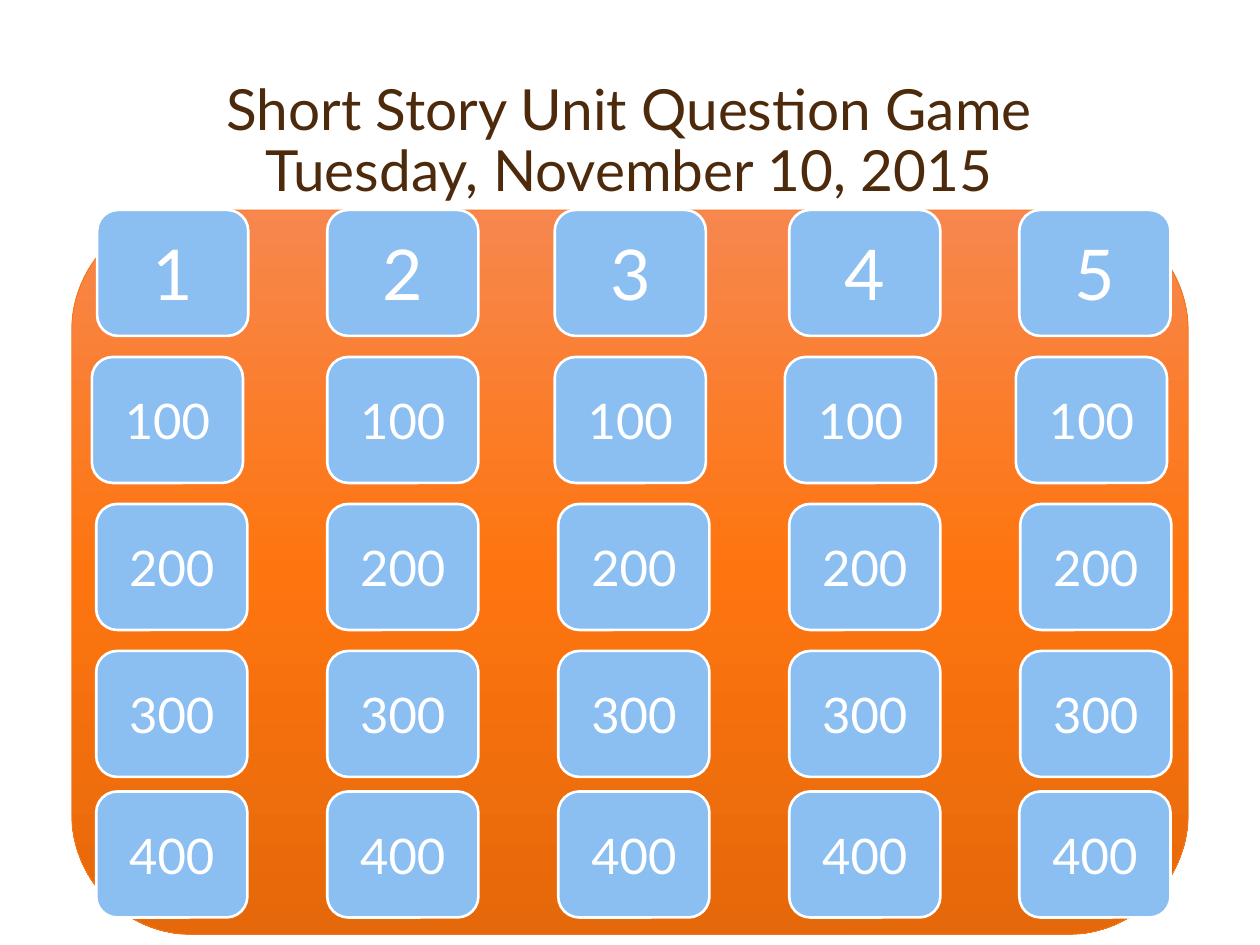
from copy import deepcopy
from dataclasses import dataclass

from pptx import Presentation
from pptx.dml.color import RGBColor
from pptx.enum.shapes import MSO_SHAPE
from pptx.enum.text import MSO_ANCHOR, MSO_AUTO_SIZE, PP_ALIGN
from pptx.util import Pt


@dataclass(frozen=True)
class Theme:
    font: str = "Lato"
    brown: str = "4D2A0B"
    blue: str = "8BBEF1"
    white: str = "FFFFFF"
    edge: str = "F3771A"
    glow: tuple = ((0, "F7874E"), (0.5, "FE750F"), (1, "E5680A"))
    title: float = 32.4
    head: float = 40
    score: float = 28


THEME = Theme()
LEFT, STEP = 55, 132
TILE_W, TILE_H = 86.4, 72
# Top of each row, its labels, and how far each tile sits off its column
ROWS = (
    (120, "12345", THEME.head, (0.5, 0, -2, 0, -0.5)),
    (204, ["100"] * 5, THEME.score, (-2.5, 0, -2, -2.5, -2.5)),
    (288, ["200"] * 5, THEME.score, (0,) * 5),
    (372, ["300"] * 5, THEME.score, (0,) * 5),
    (452.3, ["400"] * 5, THEME.score, (0, 0, 0, 0, -0.5)),
)


def color(code):
    return RGBColor.from_string(code)


def style(frame, size, code, anchor):
    frame.vertical_anchor = anchor
    for para in frame.paragraphs:
        para.alignment = PP_ALIGN.CENTER
        for run in para.runs:
            run.font.name = THEME.font
            run.font.size = Pt(size)
            run.font.color.rgb = color(code)


def add_title(slide, text):
    title = slide.shapes.title
    title.left, title.top = Pt(62.5), Pt(24)
    title.width, title.height = Pt(594), Pt(96)
    frame = title.text_frame
    frame.text = text
    frame.word_wrap = True
    frame.auto_size = MSO_AUTO_SIZE.NONE
    frame.paragraphs[0].line_spacing = 0.9
    style(frame, THEME.title, THEME.brown, MSO_ANCHOR.BOTTOM)


def add_box(slide, left, top, width, height, edge, weight):
    box = slide.shapes.add_shape(
        MSO_SHAPE.ROUNDED_RECTANGLE, Pt(left), Pt(top), Pt(width), Pt(height)
    )
    box.shadow.inherit = False
    box.line.color.rgb = color(edge)
    box.line.width = Pt(weight)
    return box


def add_board(slide):
    board = add_box(slide, 41, 120, 638, 414, THEME.edge, 0.5)
    fill = board.fill
    fill.gradient()
    fill.gradient_angle = 270
    stops = board._element.spPr.xpath("a:gradFill/a:gsLst")[0]
    stops.append(deepcopy(stops[-1]))
    for stop, (place, code) in zip(fill.gradient_stops, THEME.glow):
        stop.position = place
        stop.color.rgb = color(code)


def add_tile(slide, left, top, text, size):
    tile = add_box(slide, left, top, TILE_W, TILE_H, THEME.white, 1.5)
    tile.fill.solid()
    tile.fill.fore_color.rgb = color(THEME.blue)
    tile.text_frame.text = text
    style(tile.text_frame, size, THEME.white, MSO_ANCHOR.MIDDLE)


def main():
    deck = Presentation()
    deck.slide_width, deck.slide_height = Pt(720), Pt(540)
    slide = deck.slides.add_slide(deck.slide_layouts[5])
    add_title(slide, "Short Story Unit Question Game\vTuesday, November 10, 2015")
    add_board(slide)
    for top, labels, size, shifts in ROWS:
        for col, (label, shift) in enumerate(zip(labels, shifts)):
            add_tile(slide, LEFT + col * STEP + shift, top, label, size)
    deck.save("out.pptx")


if __name__ == "__main__":
    main()
